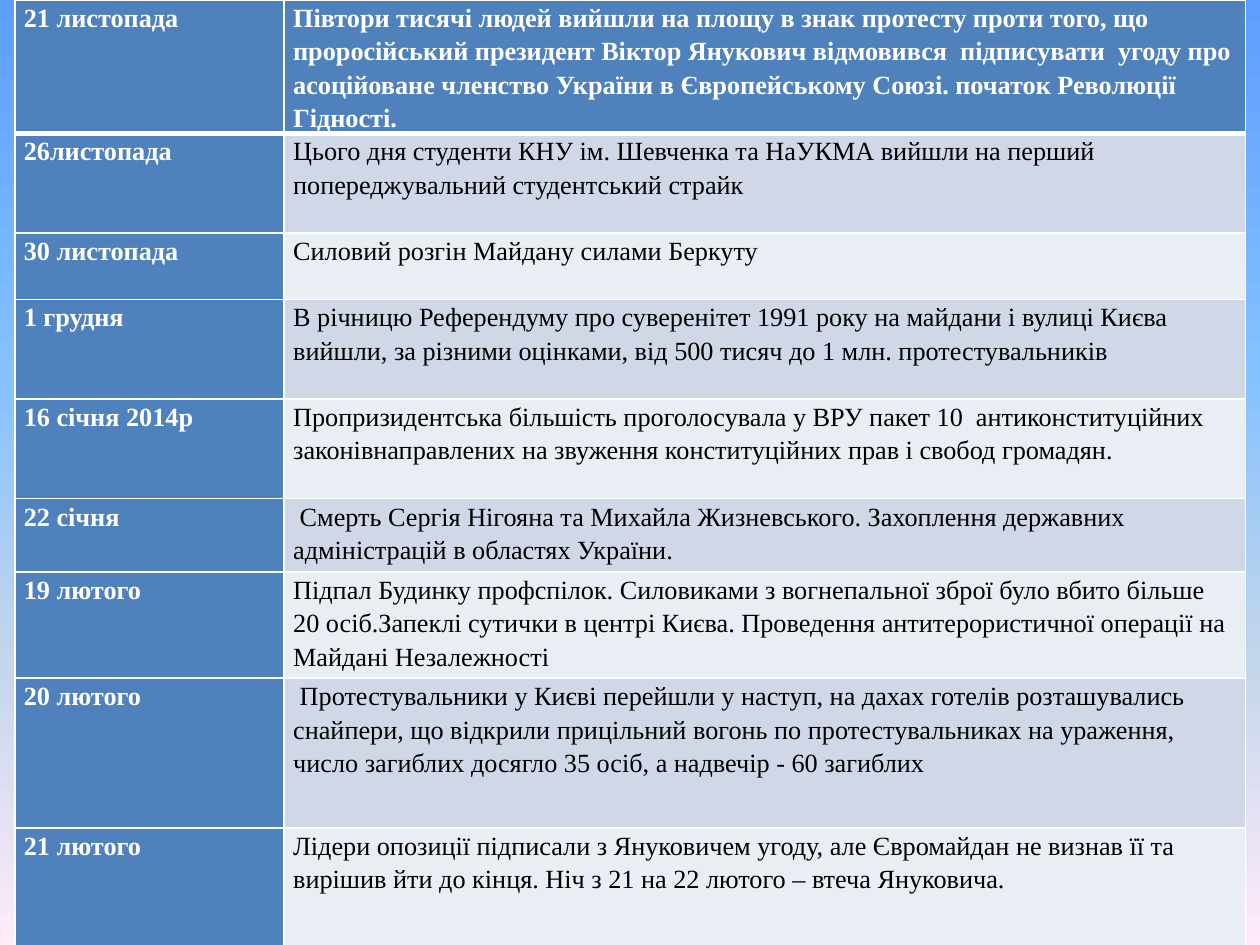
import lxml.etree
import pptx
import pptx.dml.color
import pptx.enum.text
import pptx.oxml
import pptx.oxml.ns
import pptx.util
from pptx.util import Cm

RGBColor = pptx.dml.color.RGBColor
WHITE = RGBColor(0xFF, 0xFF, 0xFF)
BLACK = RGBColor(0x00, 0x00, 0x00)
BLUE = RGBColor(0x4F, 0x81, 0xBD)
BANDS = (RGBColor(0xE9, 0xED, 0xF4), RGBColor(0xD0, 0xD8, 0xE8))
SKY = (
    (0, RGBColor(0x5E, 0x9E, 0xFF)),
    (40, RGBColor(0x85, 0xC2, 0xFF)),
    (70, RGBColor(0xC4, 0xD6, 0xEB)),
    (100, RGBColor(0xFF, 0xEB, 0xFA)),
)

COLUMN_WIDTHS = (5.43, 19.38)
EVENTS = (
    (2.68, "21 листопада", "Півтори тисячі людей вийшли на площу в знак протесту проти того, що проросійський президент Віктор Янукович відмовився  підписувати  угоду про асоційоване членство України в Європейському Союзі. початок Революції Гідності."),
    (2.01, "26листопада", "Цього дня студенти КНУ ім. Шевченка та НаУКМА вийшли на перший попереджувальний студентський страйк"),
    (1.34, "30 листопада", "Силовий розгін Майдану силами Беркуту"),
    (2.01, "1 грудня", "В річницю Референдуму про суверенітет 1991 року на майдани і вулиці Києва вийшли, за різними оцінками, від 500 тисяч до 1 млн. протестувальників"),
    (2.01, "16 січня 2014р", "Пропризидентська більшість проголосувала у ВРУ пакет 10  антиконституційних законівнаправлених на звуження конституційних прав і свобод громадян."),
    (1.48, "22 січня", " Смерть Сергія Нігояна та Михайла Жизневського. Захоплення державних адміністрацій в областях України."),
    (2.14, "19 лютого", "Підпал Будинку профспілок. Силовиками з вогнепальної зброї було вбито більше 20 осіб.Запеклі сутички в центрі Києва. Проведення антитерористичної операції на Майдані Незалежності"),
    (3.02, "20 лютого", " Протестувальники у Києві перейшли у наступ, на дахах готелів розташувались снайпери, що відкрили прицільний вогонь по протестувальниках на ураження, число загиблих досягло 35 осіб, а надвечір - 60 загиблих"),
    (3.02, "21 лютого", "Лідери опозиції підписали з Януковичем угоду, але Євромайдан не визнав її та вирішив йти до кінця. Ніч з 21 на 22 лютого – втеча Януковича."),
)

CELL_FORMAT = {
    "margin_left": Cm(0.18),
    "margin_right": Cm(0.18),
    "margin_top": 0,
    "margin_bottom": 0,
    "vertical_anchor": pptx.enum.text.MSO_ANCHOR.TOP,
}
FONT_FORMAT = {"name": "Times New Roman", "size": pptx.util.Pt(15)}


def apply_format(target, values):
    """Set every attribute in values on target."""
    for name, value in values.items():
        setattr(target, name, value)


def add_xml(parent, tag, **attributes):
    """Append a DrawingML element and return it."""
    return lxml.etree.SubElement(parent, pptx.oxml.ns.qn(tag), attributes)


def paint_background(page):
    """Fill the page with a vertical gradient."""
    fill = page.background.fill
    fill.gradient()
    fill.gradient_angle = 270
    stops = page.element.xpath(".//p:bg//a:gsLst")[0]
    for stop in list(stops):
        stops.remove(stop)
    for percent, color in SKY:
        stop = add_xml(stops, "a:gs", pos=str(percent * 1000))
        add_xml(stop, "a:srgbClr", val=str(color))


def draw_borders(cell, bottom_width):
    """Give a cell white borders, with its own bottom width in points."""
    properties = cell._tc.get_or_add_tcPr()
    for side, width in (("L", 1), ("R", 1), ("T", 1), ("B", bottom_width)):
        line = add_xml(properties, f"a:ln{side}", w=str(pptx.util.Pt(width)))
        add_xml(add_xml(line, "a:solidFill"), "a:srgbClr", val=str(WHITE))


def fill_cell(cell, text, fill_color, is_heading, bottom_width):
    """Write and format one table cell."""
    apply_format(cell, CELL_FORMAT)
    draw_borders(cell, bottom_width)
    cell.fill.solid()
    cell.fill.fore_color.rgb = fill_color
    para = cell.text_frame.paragraphs[0]
    para.line_spacing = 1.15
    span = para.add_run()
    span.text = text
    apply_format(span.font, FONT_FORMAT)
    span.font.bold = is_heading
    span.font.color.rgb = WHITE if is_heading else BLACK


def add_timeline(page, left, top, width, height):
    """Place the table of dated events in the given box."""
    frame = page.shapes.add_table(
        len(EVENTS), len(COLUMN_WIDTHS), left, top, width, height
    )
    table = frame.table
    table.first_col = True
    for column, column_width in zip(table.columns, COLUMN_WIDTHS):
        column.width = Cm(column_width)
    for row_index, (row_height, *texts) in enumerate(EVENTS):
        table.rows[row_index].height = Cm(row_height)
        for column_index, text in enumerate(texts):
            is_heading = row_index == 0 or column_index == 0
            fill_cell(
                table.cell(row_index, column_index),
                text,
                BLUE if is_heading else BANDS[row_index % 2],
                is_heading,
                3 if row_index == 0 else 1,
            )


def main():
    """Build the deck and save it."""
    deck = pptx.Presentation()
    deck.slide_width, deck.slide_height = Cm(25.4), Cm(19.05)
    page = deck.slides.add_slide(deck.slide_layouts[6])
    paint_background(page)
    table_height = sum(event[0] for event in EVENTS)
    add_timeline(page, Cm(0.3), 0, Cm(sum(COLUMN_WIDTHS)), Cm(table_height))
    deck.save("out.pptx")


if __name__ == "__main__":
    main()
